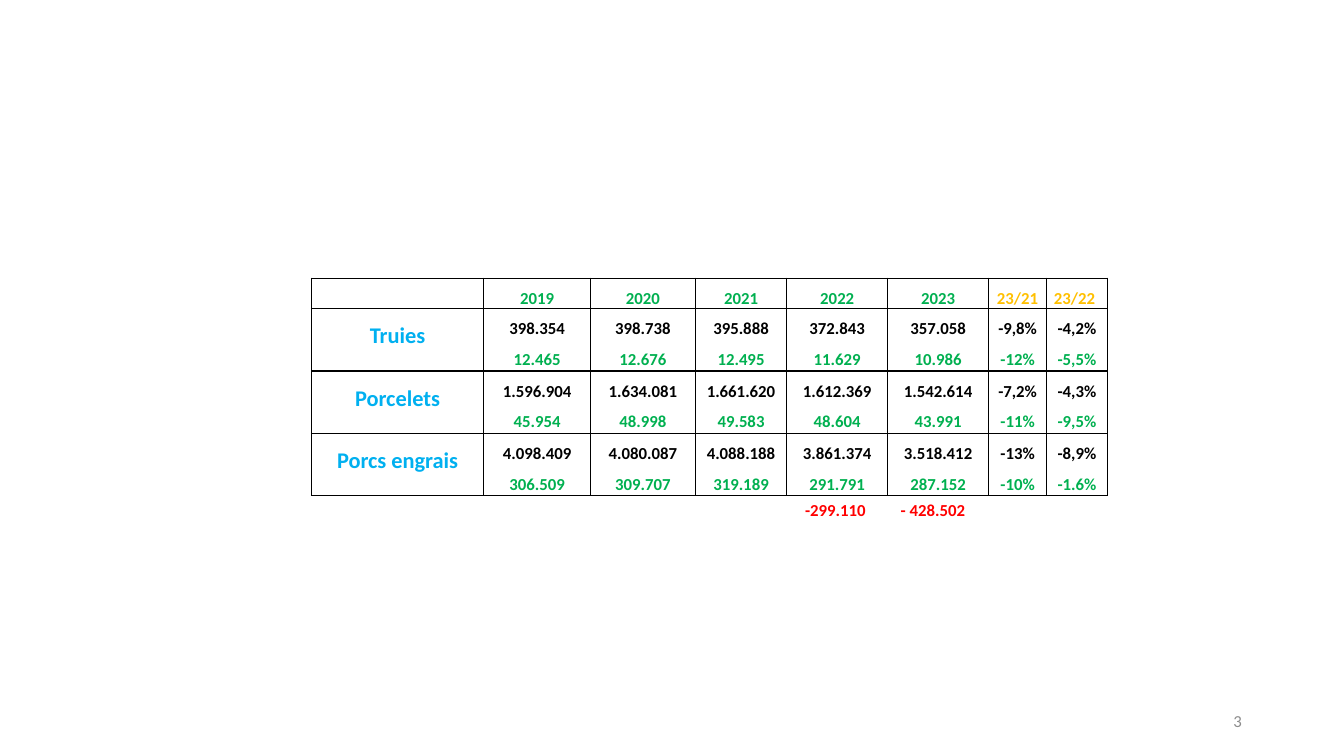
from lxml.etree import SubElement
from pptx import Presentation
from pptx.dml.color import RGBColor
from pptx.enum.text import MSO_ANCHOR as Anchor, PP_ALIGN as Align
from pptx.oxml.ns import qn
from pptx.util import Cm, Pt

GREEN, BLUE, AMBER = "00B050", "00B0F0", "FFC000"
BLACK, RED, GREY = "000000", "FF0000", "8C8C8C"
COLUMN_WIDTHS = [4.34, 2.69, 2.64, 2.31, 2.54, 2.54, 1.47, 1.52]
ROW_HEIGHTS = [0.77, 1.57, 1.57, 1.57]
HEADINGS = ["2019", "2020", "2021", "2022", "2023", "23/21", "23/22"]
HERDS = {
    "Truies": [
        ("398.354", "12.465"), ("398.738", "12.676"), ("395.888", "12.495"),
        ("372.843", "11.629"), ("357.058", "10.986"),
        ("-9,8%", "-12%"), ("-4,2%", "-5,5%"),
    ],
    "Porcelets": [
        ("1.596.904", "45.954"), ("1.634.081", "48.998"), ("1.661.620", "49.583"),
        ("1.612.369", "48.604"), ("1.542.614", "43.991"),
        ("-7,2%", "-11%"), ("-4,3%", "-9,5%"),
    ],
    "Porcs engrais": [
        ("4.098.409", "306.509"), ("4.080.087", "309.707"), ("4.088.188", "319.189"),
        ("3.861.374", "291.791"), ("3.518.412", "287.152"),
        ("-13%", "-10%"), ("-8,9%", "-1.6%"),
    ],
}


def set_all(target, values):
    for name, value in values.items():
        setattr(target, name, value)


def color(hex_text):
    return RGBColor.from_string(hex_text)


def add_run(paragraph, text, hex_text, size=12, bold=True):
    run = paragraph.add_run()
    run.text = text
    set_all(run.font, {"name": "Calibri", "size": Pt(size), "bold": bold})
    run.font.color.rgb = color(hex_text)


def add_label(slide, box, text, hex_text, bold=True, align=Align.LEFT, **frame_format):
    shape = slide.shapes.add_textbox(*map(Cm, box))
    set_all(shape.text_frame, frame_format)
    paragraph = shape.text_frame.paragraphs[0]
    paragraph.alignment = align
    add_run(paragraph, text, hex_text, bold=bold)


def add_borders(cell):
    properties = cell._tc.get_or_add_tcPr()
    for side in ("a:lnL", "a:lnR", "a:lnT", "a:lnB"):
        line = SubElement(properties, qn(side), w=str(Pt(1)))
        fill = SubElement(line, qn("a:solidFill"))
        SubElement(fill, qn("a:srgbClr"), val=BLACK)


def fill_cell(cell, runs, size=12, align=Align.CENTER):
    set_all(cell, {
        "margin_left": Cm(0.18), "margin_right": Cm(0.18),
        "margin_top": 0, "margin_bottom": 0,
    })
    add_borders(cell)
    cell.fill.background()
    paragraph = cell.text_frame.paragraphs[0]
    set_all(paragraph, {"alignment": align, "line_spacing": 1.5 if runs else 1.0})
    for text, hex_text in runs:
        add_run(paragraph, text, hex_text, size)


def add_herd_table(slide):
    table = slide.shapes.add_table(
        len(ROW_HEIGHTS), len(COLUMN_WIDTHS), Cm(7.85), Cm(7.01),
        Cm(sum(COLUMN_WIDTHS)), Cm(sum(ROW_HEIGHTS)),
    ).table
    set_all(table, {"first_row": False, "horz_banding": False})
    for column, width in zip(table.columns, COLUMN_WIDTHS):
        column.width = Cm(width)
    for row, height in zip(table.rows, ROW_HEIGHTS):
        row.height = Cm(height)

    fill_cell(table.cell(0, 0), [])
    for column, heading in enumerate(HEADINGS, 1):
        hex_text = AMBER if "/" in heading else GREEN
        align = Align.LEFT if heading == HEADINGS[-1] else Align.CENTER
        fill_cell(table.cell(0, column), [(heading, hex_text)], align=align)
    for row, (herd, values) in enumerate(HERDS.items(), 1):
        fill_cell(table.cell(row, 0), [(herd, BLUE)], size=16)
        for column, (total, regional) in enumerate(values, 1):
            fill_cell(table.cell(row, column), [(total + " ", BLACK), (regional, GREEN)])


def main():
    presentation = Presentation()
    set_all(presentation, {"slide_width": Cm(33.87), "slide_height": Cm(19.05)})
    slide = presentation.slides.add_slide(presentation.slide_layouts[6])
    add_label(slide, (23.93, 17.65, 7.62, 1.02), "3", GREY, bold=False,
              align=Align.RIGHT, word_wrap=True, vertical_anchor=Anchor.MIDDLE)
    add_herd_table(slide)
    add_label(slide, (22.45, 12.47, 2.16, 0.77), "- 428.502", RED, word_wrap=False)
    add_label(slide, (20.04, 12.47, 2.06, 0.77), "-299.110", RED, word_wrap=False)
    presentation.save("out.pptx")


if __name__ == "__main__":
    main()
